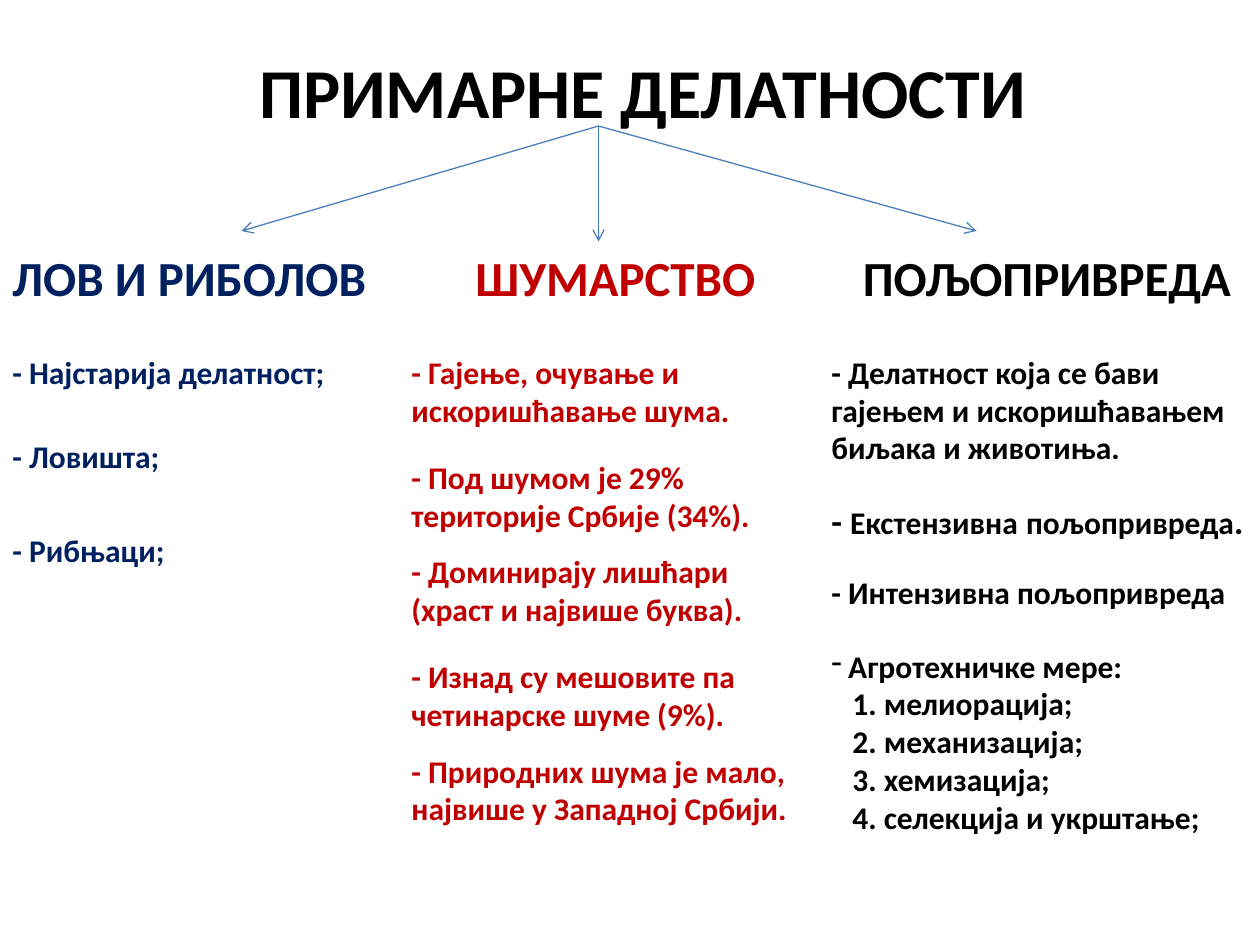
from lxml import etree
from pptx import Presentation
from pptx.dml.color import RGBColor
from pptx.enum.shapes import MSO_CONNECTOR
from pptx.enum.text import MSO_AUTO_SIZE
from pptx.oxml.ns import qn
from pptx.util import Pt

STRAIGHT = MSO_CONNECTOR.STRAIGHT
GROW = MSO_AUTO_SIZE.SHAPE_TO_FIT_TEXT
EMU_PER_PX = 7620
BLACK, NAVY, RED, BLUE = "000000", "002060", "C00000", "4B7EBC"
TITLE, HEADING, BODY, LARGE_BODY = 40, 28, 18, 20


def px(length):
    return length * EMU_PER_PX


def color(value):
    return RGBColor.from_string(value)


class SlideBuilder:
    font_name = "Calibri"

    def __init__(self, presentation):
        self.slide = presentation.slides.add_slide(presentation.slide_layouts[6])

    def text_box(self, left, top, width, height):
        shape = self.slide.shapes.add_textbox(px(left), px(top), px(width), px(height))
        frame = shape.text_frame
        frame.word_wrap = True
        frame.auto_size = GROW
        return frame

    def runs(self, paragraph, runs, fill):
        for text, size in runs:
            run = paragraph.add_run()
            run.text = text
            run.font.name = self.font_name
            run.font.size = Pt(size)
            run.font.bold = True
            run.font.color.rgb = color(fill)

    def indent(self, paragraph, margin, first_line=0):
        properties = paragraph._p.get_or_add_pPr()
        properties.set("marL", str(px(margin)))
        properties.set("indent", str(px(first_line)))
        return properties

    def text(self, left, top, width, height, runs, fill, margin=0):
        paragraph = self.text_box(left, top, width, height).paragraphs[0]
        self.indent(paragraph, margin)
        self.runs(paragraph, runs, fill)

    def dashed_list(self, left, top, width, height, lead, items, fill):
        frame = self.text_box(left, top, width, height)
        paragraph = frame.paragraphs[0]
        properties = self.indent(paragraph, 16, -16)
        etree.SubElement(properties, qn("a:buFontTx"))
        etree.SubElement(properties, qn("a:buChar")).set("char", "-")
        self.runs(paragraph, [(lead, BODY)], fill)
        for item in items:
            paragraph = frame.add_paragraph()
            self.indent(paragraph, 20)
            self.runs(paragraph, [(item, BODY)], fill)

    def arrow(self, start, end):
        points = [px(value) for value in (*start, *end)]
        connector = self.slide.shapes.add_connector(STRAIGHT, *points)
        connector.line.color.rgb = color(BLUE)
        connector.line.width = Pt(0.75)
        line = connector.line._get_or_add_ln()
        etree.SubElement(line, qn("a:tailEnd")).set("type", "arrow")
        etree.SubElement(connector._element.spPr, qn("a:effectLst"))


def main():
    presentation = Presentation()
    presentation.slide_width = px(1200)
    presentation.slide_height = px(900)
    builder = SlideBuilder(presentation)

    builder.text(190, 40, 900, 93, [("ПРИМАРНЕ ДЕЛАТНОСТИ", TITLE)], BLACK, 45)

    headings = [
        (0, 380, "ЛОВ И РИБОЛОВ", NAVY, 0),
        (420, 390, "ШУМАРСТВО", RED, 21),
        (810, 390, "ПОЉОПРИВРЕДА", BLACK, 0),
    ]
    for left, width, heading, fill, margin in headings:
        builder.text(left, 230, width, 69, [(heading, HEADING)], fill, margin)

    for end in [(570, 230), (230, 220), (930, 220)]:
        builder.arrow((570, 120), end)

    hunting = [
        (330, 370, "- Најстарија делатност;"),
        (410, 350, "- Ловишта;"),
        (500, 290, "- Рибњаци;"),
    ]
    for top, width, note in hunting:
        builder.text(0, top, width, 48, [(note, BODY)], NAVY)

    forestry = [
        (330, 370, "- Гајење, очување и искоришћавање шума."),
        (430, 400, "- Под шумом је 29% територије Србије (34%)."),
        (520, 390, "- Доминирају лишћари (храст и највише буква)."),
        (620, 410, "- Изнад су мешовите па четинарске шуме (9%)."),
        (710, 430, "- Природних шума је мало, највише у Западној Србији."),
    ]
    for top, width, note in forestry:
        builder.text(380, top, width, 85, [(note, BODY)], RED)

    extensive = [
        ("- ", LARGE_BODY),
        ("Екстензивна", BODY),
        (" ", LARGE_BODY),
        ("пољопривреда", BODY),
        (".", LARGE_BODY),
    ]
    definition = "- Делатност која се бави гајењем и искоришћавањем биљака и животиња."
    agriculture = [
        (330, 121, [(definition, BODY)]),
        (470, 53, extensive),
        (540, 48, [("- Интензивна пољопривреда", BODY)]),
    ]
    for top, height, runs in agriculture:
        builder.text(780, top, 420, height, runs, BLACK)

    measures = [
        "1. мелиорација;",
        "2. механизација;",
        "3. хемизација;",
        "4. селекција и укрштање;",
    ]
    builder.dashed_list(780, 610, 400, 194, "Агротехничке мере:", measures, BLACK)

    presentation.save("out.pptx")


if __name__ == "__main__":
    main()
